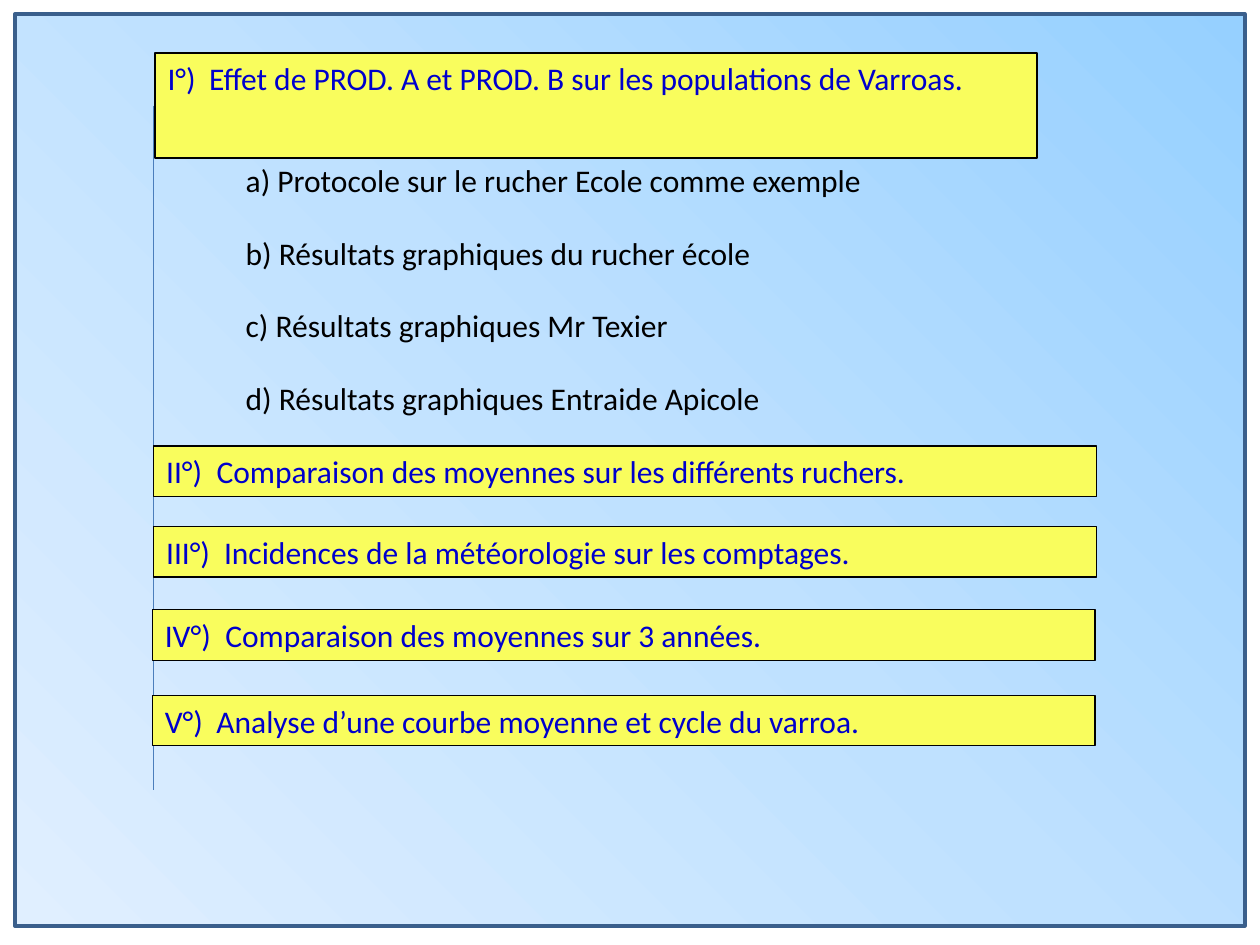
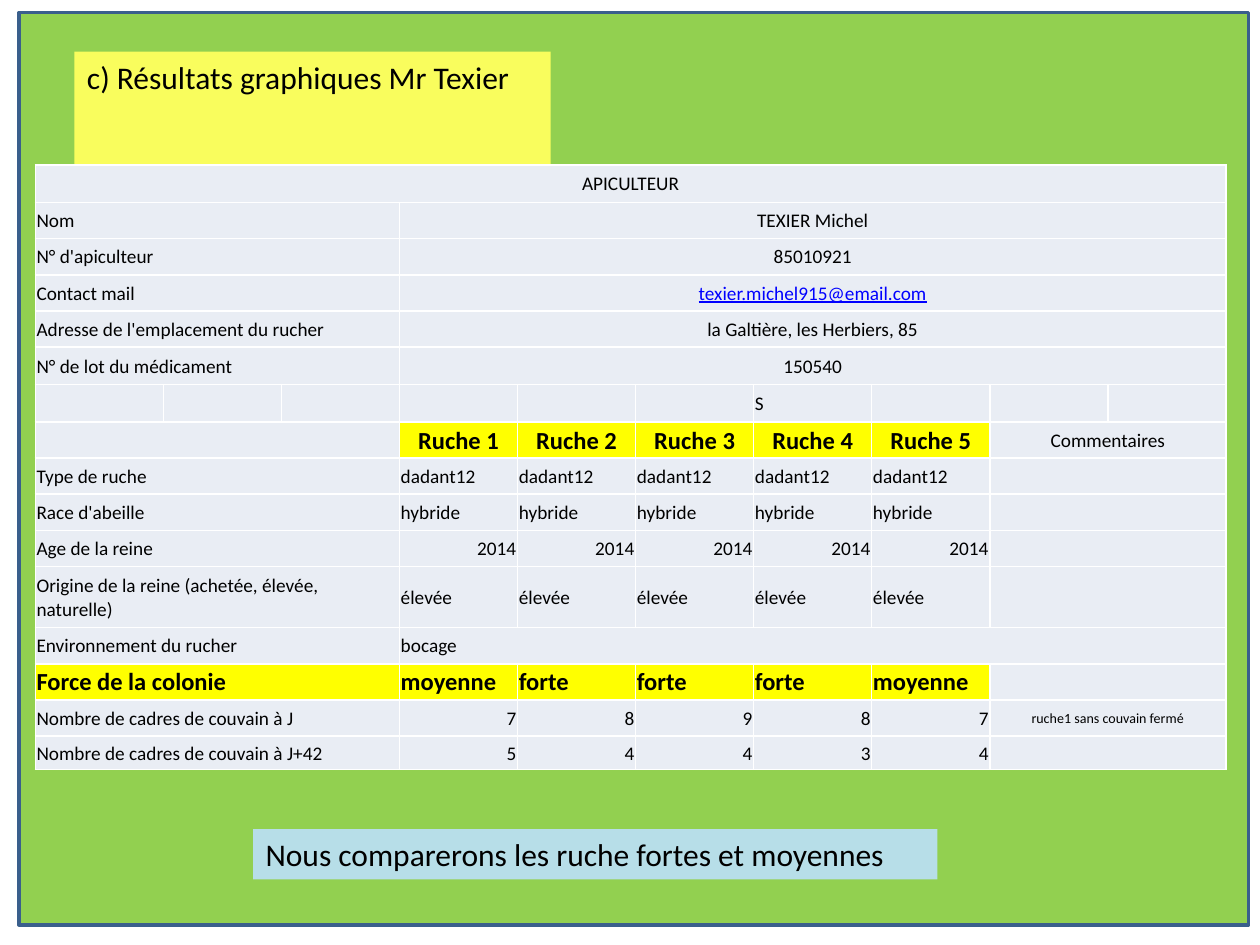
"""Build two slides: the outline of a varroa study and one beekeeper's record."""
from dataclasses import dataclass

from lxml.etree import SubElement
from pptx import Presentation
from pptx.dml.color import RGBColor as RGB
from pptx.enum.shapes import MSO_CONNECTOR as CONN, MSO_SHAPE as SHAPE
from pptx.enum.text import MSO_ANCHOR as ANCHOR, MSO_AUTO_SIZE as FIT, PP_ALIGN as AL
from pptx.oxml import parse_xml
from pptx.oxml.ns import nsdecls, qn
from pptx.util import Inches, Pt

L, C, R = AL.LEFT, AL.CENTER, AL.RIGHT

MAIN_TITLE = ("I°)\tEffet de PROD. A et PROD. B sur les populations de Varroas.", 0.33)
STEPS = [
    "a) Protocole sur le rucher Ecole comme exemple",
    "b) Résultats graphiques du rucher école",
    "c) Résultats graphiques Mr Texier",
    "d) Résultats graphiques Entraide Apicole",
]
SECTIONS = [
    ("II°)\tComparaison des moyennes sur les différents ruchers.", 0.4, 1.22, 3.54),
    ("III°)\tIncidences de la météorologie sur les comptages.", 0.46, 1.22, 4.18),
    ("IV°)\tComparaison des moyennes sur 3 années.", 0.48, 1.21, 4.84),
    ("V°)\tAnalyse d’une courbe moyenne et cycle du varroa.", 0.41, 1.21, 5.52),
]

CONCLUSION = "Nous comparerons les ruche fortes et moyennes"
KEEPER = [
    ("Nom", "TEXIER Michel", "plain"),
    ("N° d'apiculteur", "85010921", "plain"),
    ("Contact mail", "texier.michel915@email.com", "link"),
    ("Adresse de l'emplacement du rucher", "la Galtière, les Herbiers, 85", "plain"),
    ("N° de lot du médicament", "150540", "plain"),
]
HIVES = [
    ("Type de ruche", ["dadant12"] * 5, L),
    ("Race d'abeille", ["hybride"] * 5, L),
    ("Age de la reine", ["2014"] * 5, R),
    ("Origine de la reine (achetée, élevée, naturelle)", ["élevée"] * 5, L),
]
STRENGTH = ["moyenne", "forte", "forte", "forte", "moyenne"]
BROOD = [
    ("Nombre de cadres de couvain à J", "78987", "ruche1 sans couvain fermé"),
    ("Nombre de cadres de couvain à J+42", "54434", ""),
]
COL_WIDTHS = [1.02] + [0.94] * 9
ROW_HEIGHTS = [0.3] + [0.29] * 4 + [0.3] * 2 + [0.29] * 4 + [0.49] + [0.29] * 3 + [0.27]


@dataclass(frozen=True)
class Theme:
    """Colours, fonts and type sizes shared by both slides."""
    font: str = "Calibri"
    size: int = 18
    black: str = "000000"
    blue: str = "0000CC"
    yellow: str = "F9FD5D"
    pale_blue: str = "B7DEE8"
    green: str = "92D050"
    frame: str = "3A5F8C"
    rule: str = "4B7EBC"
    border: str = "FFFFFF"
    glow: tuple = ((0, "96D0FF"), (50, "BFE1FF"), (100, "E0EFFF"))


T = Theme()
CELL = {
    "plain": {"fill": "E9EDF4", "size": 11},
    "link": {"fill": "E9EDF4", "size": 11, "color": "0000FF", "underline": True},
    "note": {"fill": "E9EDF4", "size": 8},
    "strong": {"fill": "FFFF00", "size": 14, "bold": True},
}


def write(p, text, size=T.size, color=T.black, align=L, **extra):
    """Put one formatted run in a paragraph."""
    p.alignment = align
    if not text:
        SubElement(p._p, qn("a:endParaRPr"), sz=str(size * 100))
        return
    r = p.add_run()
    r.text = text
    for name, value in {"name": T.font, "size": Pt(size), "bold": False, **extra}.items():
        setattr(r.font, name, value)
    r.font.color.rgb = RGB.from_string(color)


def place(sp, *box):
    """Move and size a shape, in inches."""
    for name, value in zip(("left", "top", "width", "height"), box):
        setattr(sp, name, Inches(value))


def paint(sp, fill=None, line=None, width=0.75):
    """Set fill and outline and drop the shadow."""
    sp.shadow.inherit = False
    if fill:
        sp.fill.solid()
        sp.fill.fore_color.rgb = RGB.from_string(fill)
    if line:
        sp.line.color.rgb = RGB.from_string(line)
        sp.line.width = Pt(width)
    else:
        sp.line.fill.background()


def label(sp, text, box, fill, line=None, color=T.black, tab=None):
    """Turn a title or a rectangle into a coloured one-line label."""
    place(sp, *box)
    paint(sp, fill, line)
    tf = sp.text_frame
    tf.word_wrap, tf.auto_size, tf.vertical_anchor = True, FIT.SHAPE_TO_FIT_TEXT, ANCHOR.TOP
    p = tf.paragraphs[0]
    write(p, text, color=color)
    if tab:
        tabs = SubElement(p._p.get_or_add_pPr(), qn("a:tabLst"))
        SubElement(tabs, qn("a:tab"), pos=str(Inches(tab)), algn="l")


def add_rect(s):
    """Add a rectangle to be placed later."""
    return s.shapes.add_shape(SHAPE.RECTANGLE, 0, 0, 0, 0)


def add_frame(s, left, top, fill=None):
    """Add the large framed panel behind everything else."""
    sp = add_rect(s)
    place(sp, left, top, 9.76, 7.24)
    if not fill:
        stops = "".join(f'<a:gs pos="{pos * 1000}"><a:srgbClr val="{rgb}"/></a:gs>'
                        for pos, rgb in T.glow)
        sp._element.spPr.insert(2, parse_xml(
            f'<a:gradFill {nsdecls("a")} rotWithShape="1"><a:gsLst>{stops}</a:gsLst>'
            '<a:path path="circle"><a:fillToRect l="100000" b="100000"/></a:path></a:gradFill>'))
    paint(sp, fill, T.frame, 2)
    s.shapes._spTree.insert(2, sp._element)


def outline_slide(prs):
    """Section labels along a vertical rule, with the steps of the first one."""
    s = prs.slides.add_slide(prs.slide_layouts[1])
    add_frame(s, 0.12, 0.11)

    rule = s.shapes.add_connector(CONN.STRAIGHT, *map(Inches, (1.22, 0.84, 1.22, 6.27)))
    rule.line.color.rgb = RGB.from_string(T.rule)
    rule.line.width = Pt(0.75)
    SubElement(rule._element.spPr, qn("a:effectLst"))

    section = {"fill": T.yellow, "line": T.black, "color": T.blue}
    text, tab = MAIN_TITLE
    label(s.shapes.title, text, (1.23, 0.42, 7, 0.4), tab=tab, **section)
    for text, tab, left, top in SECTIONS:
        label(add_rect(s), text, (left, top, 7.48, 0.4), tab=tab, **section)

    body = s.placeholders[1]
    place(body, 1.85, 1.23, 5.75, 2.2)
    tf = body.text_frame
    tf.auto_size = FIT.NONE
    for i, step in enumerate(STEPS):
        p = tf.add_paragraph() if i else tf.paragraphs[0]
        write(p, step)
        p.space_before, p.space_after = Pt(0), Pt(19.8)
        pPr = p._p.get_or_add_pPr()
        pPr.set("marL", "0")
        pPr.set("indent", "0")
        SubElement(pPr, qn("a:buNone"))


def record_rows():
    """Return the table rows as lists of (text, span, alignment, style)."""
    def hive_row(name, values, align, note="", head="plain", style="plain", note_style="plain"):
        return [(name, 3, L, head), *((v, 1, align, style) for v in values),
                (note, 2, C, note_style)]

    rows = [[("APICULTEUR", 10, C, "plain")]]
    rows += [[(name, 3, L, "plain"), (value, 7, C, style)] for name, value, style in KEEPER]
    rows.append([("S" if c == 6 else "", 1, L, "plain") for c in range(10)])
    rows.append(hive_row("", [f"Ruche {n}" for n in range(1, 6)], C, "Commentaires", style="strong"))
    rows += [hive_row(*hive) for hive in HIVES]
    rows.append([("Environnement du rucher", 3, L, "plain"), ("bocage", 7, L, "plain")])
    rows.append(hive_row("Force de la colonie", STRENGTH, L, head="strong", style="strong"))
    rows += [hive_row(name, counts, R, note, note_style="note" if note else "plain")
             for name, counts, note in BROOD]
    return rows


def fill_cell(cell, text, align, style):
    """Write, border and colour one cell."""
    fmt = dict(CELL[style])
    fill = fmt.pop("fill")
    margins = {"margin_left": 0.01, "margin_right": 0.01, "margin_top": 0.01, "margin_bottom": 0}
    for name, value in margins.items():
        setattr(cell, name, Inches(value))
    cell.vertical_anchor = ANCHOR.MIDDLE
    write(cell.text_frame.paragraphs[0], text, align=align, **fmt)
    for side in "LRTB":
        ln = SubElement(cell._tc.get_or_add_tcPr(), qn(f"a:ln{side}"), w=str(Pt(1)))
        SubElement(SubElement(ln, qn("a:solidFill")), qn("a:srgbClr"), val=T.border)
    cell.fill.solid()
    cell.fill.fore_color.rgb = RGB.from_string(fill)


def add_record(s, left, top, width, height):
    """Add the beekeeper's table."""
    rows = record_rows()
    table = s.shapes.add_table(len(rows), len(COL_WIDTHS),
                               *map(Inches, (left, top, width, height))).table
    table.first_row = table.horz_banding = False
    for col, w in zip(table.columns, COL_WIDTHS):
        col.width = Inches(w * width / sum(COL_WIDTHS))
    for row, h in zip(table.rows, ROW_HEIGHTS):
        row.height = Inches(h * height / sum(ROW_HEIGHTS))
    for r, row in enumerate(rows):
        c = 0
        for text, span, align, style in row:
            for i in range(span):
                fill_cell(table.cell(r, c + i), "" if i else text, align, style)
            if span > 1:
                table.cell(r, c).merge(table.cell(r, c + span - 1))
            c += span


def record_slide(prs):
    """The beekeeper's record with its conclusion."""
    s = prs.slides.add_slide(prs.slide_layouts[5])
    add_frame(s, 0.15, 0.1, T.green)
    label(s.shapes.title, STEPS[2], (0.59, 0.41, 3.78, 0.4), T.yellow)
    add_record(s, 0.28, 1.31, 9.45, 4.8)
    label(add_rect(s), CONCLUSION, (2.01, 6.58, 5.43, 0.4), T.pale_blue)


def main():
    """Build and save the presentation."""
    prs = Presentation()
    prs.slide_width, prs.slide_height = Inches(10), Inches(7.5)
    outline_slide(prs)
    record_slide(prs)
    prs.save("out.pptx")


if __name__ == "__main__":
    main()
